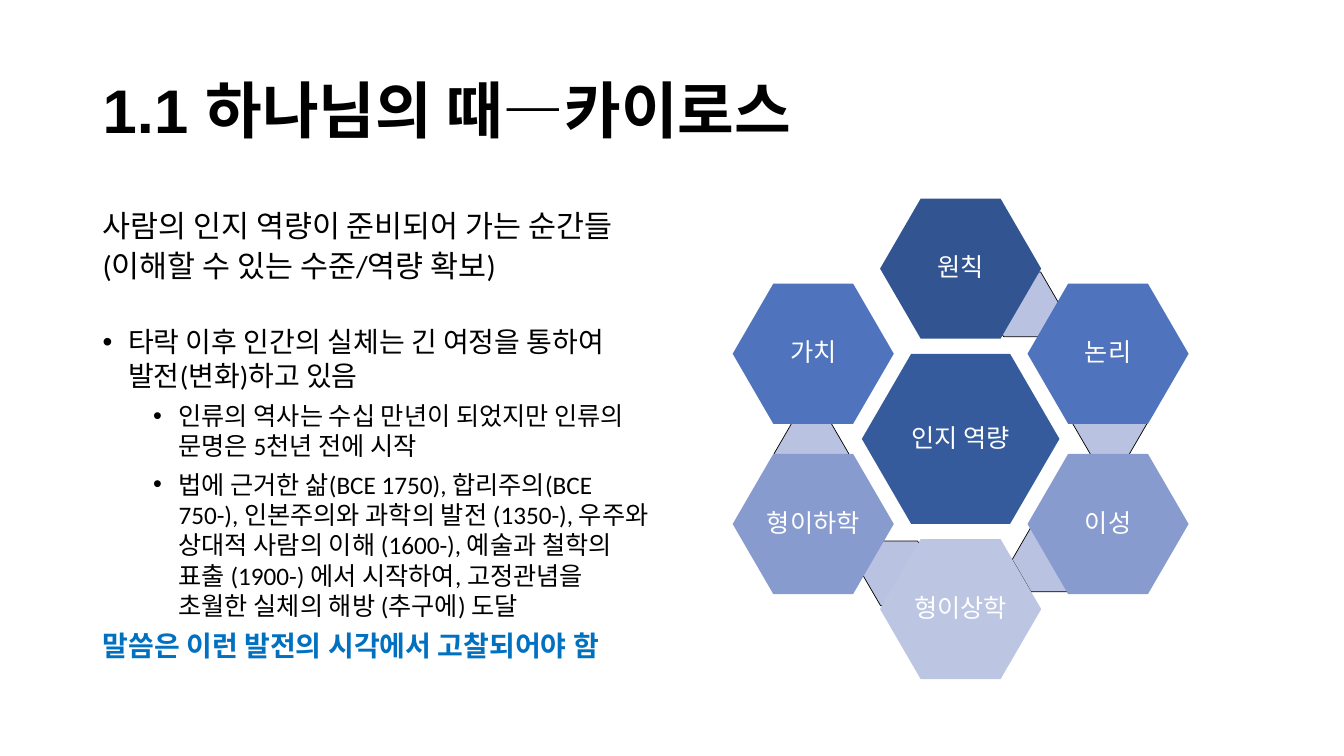
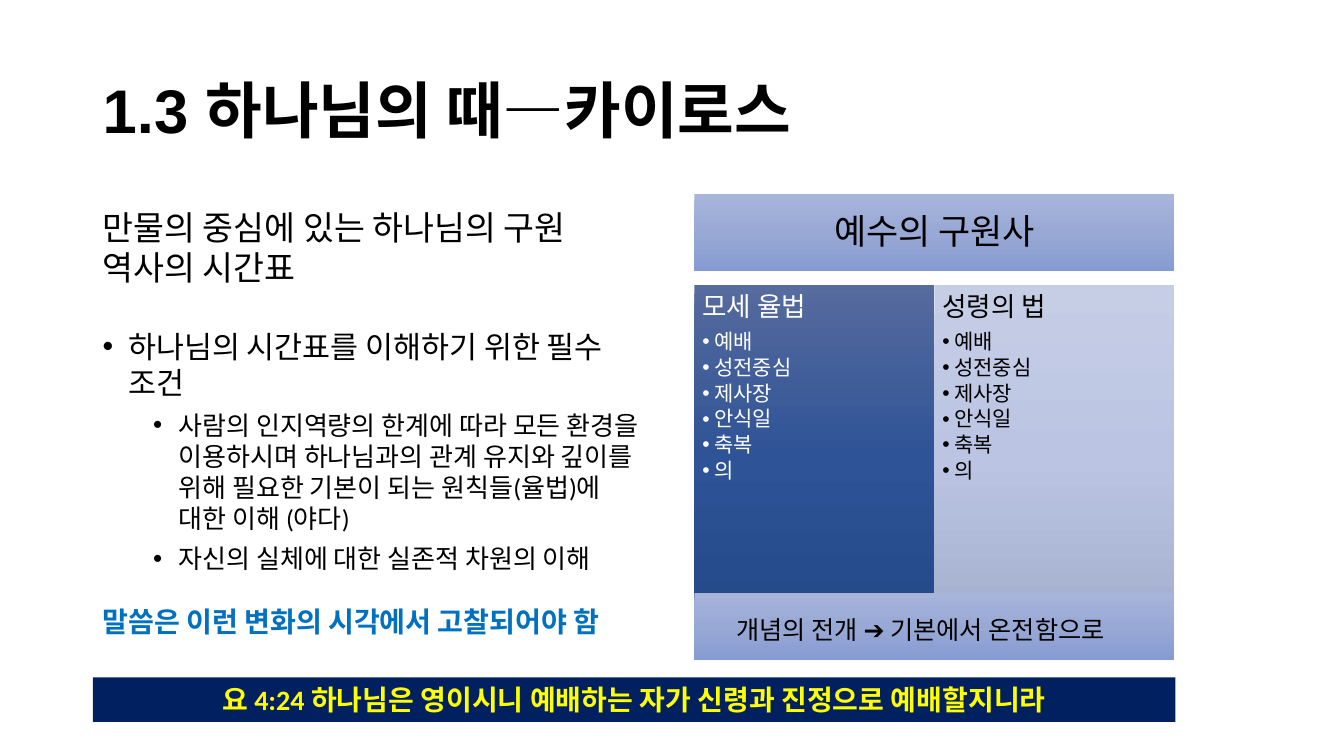
from copy import deepcopy
from math import cos, radians, sin

from lxml.etree import SubElement
from pptx import Presentation
from pptx.dml.color import RGBColor
from pptx.enum.shapes import MSO_SHAPE
from pptx.enum.text import MSO_ANCHOR, PP_ALIGN
from pptx.oxml.ns import qn
from pptx.util import Cm, Pt

COLORS = {
    "black": "000000", "white": "FFFFFF", "blue": "0070C0",
    "navy": "002060", "yellow": "FFFF00", "core": "365B9D",
    "dark": "325491", "mid": "4F73BD", "soft": "879BCE",
    "pale": "BCC6E2", "link": "B9C2E1",
}
GRADIENTS = {
    "bar": ("A7B5DB", "99A9D5", "869BD2"),
    "law": ("566B9E", "2E5396", "244989"),
    "spirit": ("C6CEE6", "BBC5E3", "A3ADCD"),
}
LEFT, BODY_W = 2.34, 14.4

# Paragraph kinds: "p" holds paragraph values, "f" font values
BODY = {"p": {"space_before": Pt(6)}}
ITEM = {**BODY, "bullet": (0.64, 0.64)}
SUBITEM = {**BODY, "bullet": (1.91, 0.64)}
CLOSING = {**BODY, "f": {"bold": True}, "color": "blue"}
TITLE = {"p": {"line_spacing": 0.9}, "f": {"name": "Arial", "bold": True}}
LABEL = {"p": {"line_spacing": 0.9, "alignment": PP_ALIGN.CENTER}}
HEADING = {"p": {"line_spacing": 0.9, "space_after": Pt(6.65)}}
POINT = {"p": {"line_spacing": 0.9, "space_after": Pt(2.25)},
         "bullet": (0.3, 0.3)}


def set_all(obj, values):
    for name, value in values.items():
        setattr(obj, name, value)


def rgb(name):
    return RGBColor.from_string(COLORS[name])


def add_bullet(p, margin, hang):
    pPr = p._p.get_or_add_pPr()
    pPr.set("marL", str(Cm(margin)))
    pPr.set("indent", str(-Cm(hang)))
    SubElement(pPr, qn("a:buFont")).set("typeface", "Arial")
    SubElement(pPr, qn("a:buChar")).set("char", "•")


def write(sp, paras, inset=(0.25, 0.13), anchor=MSO_ANCHOR.TOP,
          color="black", wrap=True):
    """Fill a shape with (text, size, kind) paragraphs."""
    tf = sp.text_frame
    side, top = (Cm(v) for v in inset)
    set_all(tf, {"word_wrap": wrap, "vertical_anchor": anchor,
                 "margin_left": side, "margin_right": side,
                 "margin_top": top, "margin_bottom": top})
    for i, (text, size, kind) in enumerate(paras):
        p = tf.add_paragraph() if i else tf.paragraphs[0]
        if "bullet" in kind:
            add_bullet(p, *kind["bullet"])
        set_all(p, {"alignment": PP_ALIGN.LEFT, **kind.get("p", {})})
        if not i:
            p.space_before = Pt(0)
        r = p.add_run()
        r.text = text
        set_all(r.font, {"name": "Calibri", "size": Pt(size),
                         **kind.get("f", {})})
        r.font.color.rgb = rgb(kind.get("color", color))


def add_text(s, box, paras, **options):
    write(s.shapes.add_textbox(*map(Cm, box)), paras, **options)


def add_panel(s, box, fill, preset=MSO_SHAPE.RECTANGLE):
    sp = s.shapes.add_shape(preset, *map(Cm, box))
    sp.shadow.inherit = False
    sp.line.fill.background()
    if fill in GRADIENTS:
        sp.fill.gradient()
        sp.fill.gradient_angle = 270
        first = sp._element.spPr.find(".//" + qn("a:gs"))
        first.addnext(deepcopy(first))
        for stop, pos, hex_color in zip(sp.fill.gradient_stops, (0, 0.5, 1),
                                        GRADIENTS[fill]):
            stop.position = pos
            stop.color.rgb = RGBColor.from_string(hex_color)
    else:
        sp.fill.solid()
        sp.fill.fore_color.rgb = rgb(fill)
    return sp


def add_hexagon(s, center, size, fill, label=None):
    (cx, cy), (w, h) = center, size
    sp = add_panel(s, (cx - w / 2, cy - h / 2, w, h), fill, MSO_SHAPE.HEXAGON)
    sp.adjustments[0] = 0.29
    if label:
        write(sp, [(label, 18, LABEL)], inset=(0.08, 0.08), color="white",
              anchor=MSO_ANCHOR.MIDDLE, wrap=False)
    return sp


def add_slide(prs, number):
    s = prs.slides.add_slide(prs.slide_layouts[6])
    add_text(s, (LEFT, 1.02, 29.21, 3.68),
             [(f"{number} 하나님의 때—카이로스", 44, TITLE)],
             anchor=MSO_ANCHOR.MIDDLE)
    return s


def add_hexagon_ring(s):
    cx, cy, radius = 24.21, 11.06, 4.29
    add_hexagon(s, (cx, cy), (4.98, 4.29), "core", "인지 역량")
    # Links behind the ring
    for dx, dy in ((1.55, -3.39), (3.76, -0.39), (2.24, 3.04),
                   (-1.55, 3.39), (-3.76, 0.37)):
        sp = add_hexagon(s, (cx + dx, cy + dy), (1.88, 1.63), "link")
        sp.line.color.rgb = rgb("black")
        sp.line.width = Pt(0.5)
    # Ring, clockwise from the top
    ring = (("원칙", "dark"), ("논리", "mid"), ("이성", "soft"),
            ("형이상학", "pale"), ("형이하학", "soft"), ("가치", "mid"))
    for i, (label, fill) in enumerate(ring):
        a = radians(60 * i)
        add_hexagon(s, (cx + radius * sin(a), cy - radius * cos(a)),
                    (4.06, 3.53), fill, label)


def add_comparison(s):
    left, width = 17.5, 12.1
    col_w = width / 2
    # Heading bar
    sp = add_panel(s, (left, 4.9, width, 1.93), "bar")
    write(sp, [("예수의 구원사", 25, LABEL)], anchor=MSO_ANCHOR.MIDDLE)
    # Two columns with the same points
    points = ("예배", "성전중심", "제사장", "안식일", "축복", "의")
    columns = (("모세 율법", "law", "white"), ("성령의 법", "spirit", "black"))
    for i, (heading, fill, color) in enumerate(columns):
        sp = add_panel(s, (left + i * col_w, 7.19, col_w, 8.69), fill)
        write(sp, [(heading, 19, HEADING)] + [(t, 15, POINT) for t in points],
              inset=(0.2, 0.2), color=color)
    # Closing bar
    add_panel(s, (left, 14.94, width, 1.7), "bar")
    add_text(s, (18.31, 15.34, 10.77, 1.02),
             [("개념의 전개 ➔ 기본에서 온전함으로", 18, {})])


def build_cognition(prs):
    s = add_slide(prs, "1.1")
    lead = {"p": {"line_spacing": 1.1}}
    add_text(s, (LEFT, 5, BODY_W, 2.49), [
        ("사람의 인지 역량이 준비되어 가는 순간들 (이해할 수 있는 수준/역량 확보)",
         21.7, lead)])
    add_text(s, (LEFT, 8.05, BODY_W, 9.04), [
        ("타락 이후 인간의 실체는 긴 여정을 통하여 발전(변화)하고 있음", 20, ITEM),
        ("인류의 역사는 수십 만년이 되었지만 인류의 문명은 5천년 전에 시작",
         18, SUBITEM),
        ("법에 근거한 삶(BCE 1750), 합리주의(BCE 750-), 인본주의와 과학의 발전 "
         "(1350-), 우주와 상대적 사람의 이해 (1600-), 예술과 철학의 표출 (1900-) "
         "에서 시작하여, 고정관념을 초월한 실체의 해방 (추구에) 도달", 18, SUBITEM),
        ("말씀은 이런 발전의 시각에서 고찰되어야 함", 20, CLOSING)])
    add_hexagon_ring(s)


def build_salvation(prs):
    s = add_slide(prs, "1.3")
    closing = {**CLOSING, "p": {"space_before": Pt(22)}}
    add_text(s, (LEFT, 5.08, BODY_W, 2.34), [
        ("만물의 중심에 있는 하나님의 구원 역사의 시간표", 24, BODY)])
    add_text(s, (LEFT, 8.13, BODY_W, 8.74), [
        ("하나님의 시간표를 이해하기 위한 필수 조건", 21.7, ITEM),
        ("사람의 인지역량의 한계에 따라 모든 환경을 이용하시며 하나님과의 관계 "
         "유지와 깊이를 위해 필요한 기본이 되는 원칙들(율법)에 대한 이해 (야다)",
         18.6, SUBITEM),
        ("자신의 실체에 대한 실존적 차원의 이해", 18.6, SUBITEM),
        ("말씀은 이런 변화의 시각에서 고찰되어야 함", 20.1, closing)])
    add_comparison(s)
    # Verse band
    verse = {"p": {"alignment": PP_ALIGN.CENTER}, "f": {"bold": True}}
    sp = add_panel(s, (LEFT, 17.07, 27.28, 1.12), "navy")
    write(sp, [("요 4:24 하나님은 영이시니 예배하는 자가 신령과 진정으로 예배할지니라",
                20, verse)], color="yellow")


def main():
    prs = Presentation()
    prs.slide_width, prs.slide_height = Cm(33.87), Cm(19.05)
    build_cognition(prs)
    build_salvation(prs)
    prs.save("out.pptx")


if __name__ == "__main__":
    main()
